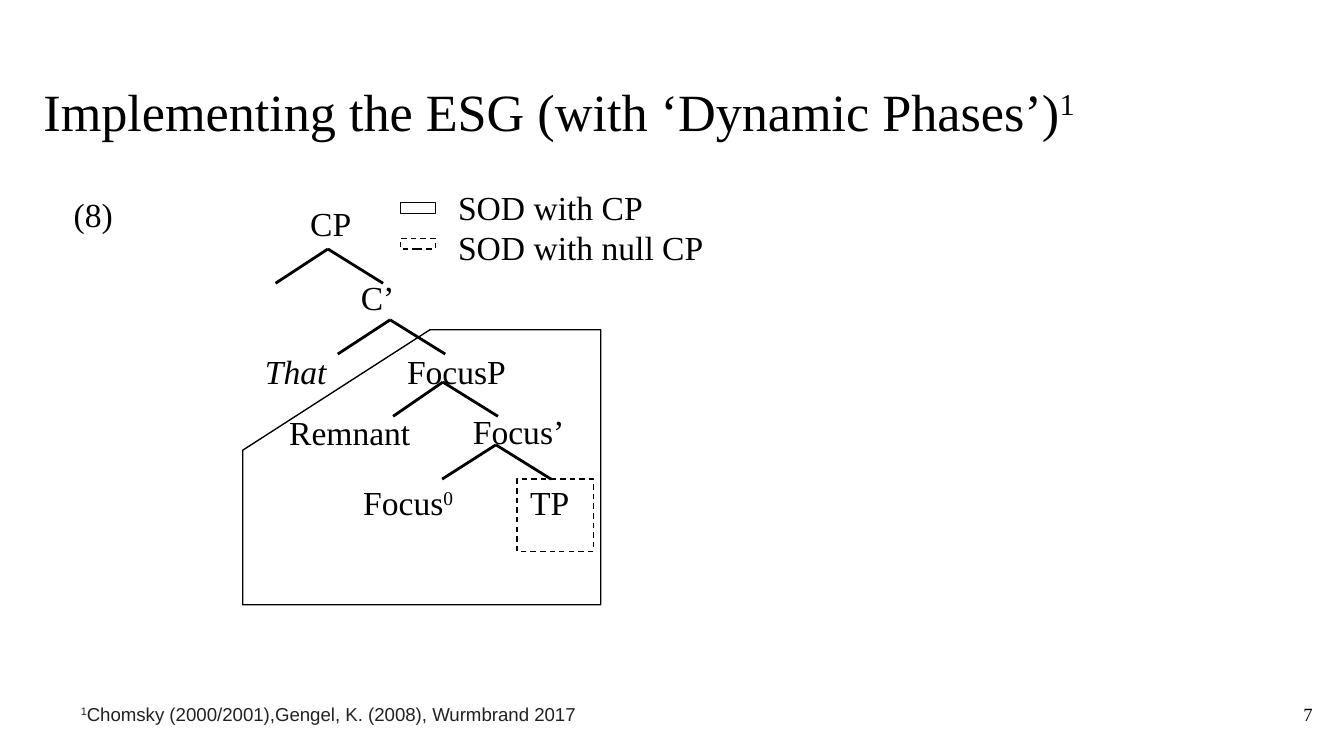
import pptx
import pptx.util
import pptx.dml.color
import pptx.enum.dml
import pptx.enum.shapes
import pptx.enum.text
import lxml.etree

BLACK = pptx.dml.color.RGBColor(0, 0, 0)
GREY = pptx.dml.color.RGBColor(0x22, 0x22, 0x22)
DASH = pptx.enum.dml.MSO_LINE.DASH
RIGHT = pptx.enum.text.PP_ALIGN.RIGHT
MID = pptx.enum.text.MSO_ANCHOR.MIDDLE

deck = pptx.Presentation()
deck.slide_width = pptx.util.Inches(10)
deck.slide_height = deck.slide_width * 9 // 16
slide = deck.slides.add_slide(deck.slide_layouts[6])
shapes = slide.shapes
UNIT = deck.slide_width / 100


def grid(*cells):
    return [round(cell * UNIT) for cell in cells]


def write(text, box, size=18, font="Times New Roman", color=BLACK,
          italic=None, align=None, anchor=None):
    frame = shapes.add_textbox(*grid(*box)).text_frame
    frame.word_wrap = True
    frame.vertical_anchor = anchor
    frame.margin_left = frame.margin_right = grid(1)[0]
    frame.margin_top = frame.margin_bottom = grid(1)[0]
    for row, line in enumerate(text.split("\n")):
        para = frame.add_paragraph() if row else frame.paragraphs[0]
        para.alignment = align
        for index, part in enumerate(line.split("^")):
            if not part:
                continue
            run = para.add_run()
            run.text = part
            run.font.size = pptx.util.Pt(size)
            run.font.name = font
            run.font.italic = italic
            run.font.color.rgb = color
            if index % 2:
                run.font._element.set("baseline", "30000")


def outline(shape, dash=None):
    shape.shadow.inherit = False
    shape.fill.background()
    shape.line.color.rgb = BLACK
    shape.line.width = pptx.util.Pt(0.75)
    shape.line.dash_style = dash


write("Implementing the ESG (with ‘Dynamic Phases’)^1", (2.25, 4.9, 94.3, 6.3), size=28)
write("7", (92.66, 51, 6, 4.3), size=10, align=RIGHT, anchor=MID)

for x, y, left in [(24.4, 18.53, 3.9), (29.03, 23.8, 3.9),
                   (32.95, 28.43, 3.7), (36.9, 33.1, 4)]:
    for step in (-left, 4.1):
        edge = shapes.add_connector(pptx.enum.shapes.MSO_CONNECTOR.STRAIGHT,
                                    *grid(x, y, x + step, y + 2.55))
        edge.line.color.rgb = BLACK
        edge.line.width = pptx.util.Pt(1.5)
        lxml.etree.SubElement(edge._element.spPr, pptx.oxml.ns.qn("a:effectLst"))

for text, x, y, width in [
    ("CP", 22.1, 14.1, 6.5),
    ("C’", 25.87, 19.6, 8.7),
    ("FocusP", 29.3, 25.1, 11.2),
    ("Focus’", 34.2, 29.6, 9.5),
    ("TP", 38.46, 34.84, 8.7),
    ("Focus^0", 26.04, 34.84, 9.5),
    ("Remnant", 20.53, 29.66, 13.1),
    ("(8)", 4.5, 13.4, 6.2),
]:
    write(text, (x, y, width, 4.5))
write("That", (18.73, 25.1, 8.7, 4.5), italic=True)
write("SOD with CP\nSOD with null CP", (33.1, 12.9, 22.7, 6.4))

for box, dash in [
    ((38.46, 35.64, 5.7, 5.4), DASH),
    ((29.8, 15.07, 2.6, 0.8), None),
    ((29.8, 17.73, 2.6, 0.8), DASH),
]:
    outline(shapes.add_shape(pptx.enum.shapes.MSO_SHAPE.RECTANGLE, *grid(*box)), dash)

pen = shapes.build_freeform(*grid(32, 24.53), scale=1.0)
pen.add_line_segments(
    [grid(*spot) for spot in [(18.06, 33.5), (18.06, 45), (44.7, 45), (44.7, 24.53)]],
    close=True)
outline(pen.convert_to_shape())

write("^1^Chomsky (2000/2001),Gengel, K. (2008), Wurmbrand 2017",
      (5.03, 51.43, 86.2, 2.6), size=10, font="Arial", color=GREY)

deck.save("out.pptx")
